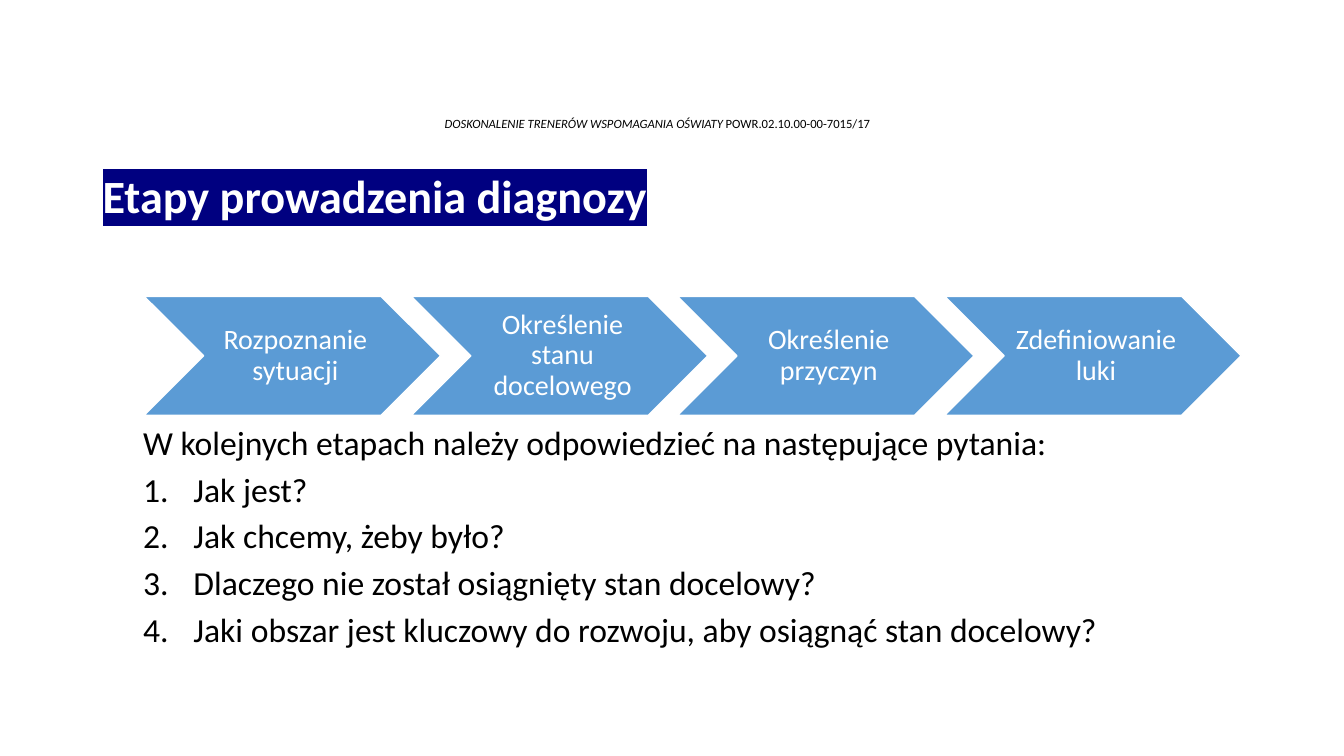
from dataclasses import dataclass

from lxml import etree
from pptx import Presentation
from pptx.dml.color import RGBColor
from pptx.enum import shapes, text
from pptx.oxml import ns
from pptx.util import Emu, Pt

PX = 9144
FONT = "Calibri"
BLACK = RGBColor(0x00, 0x00, 0x00)
WHITE = RGBColor(0xFF, 0xFF, 0xFF)
BLUE = RGBColor(0x5B, 0x9B, 0xD5)
NAVY = RGBColor(0x00, 0x00, 0x80)


@dataclass(frozen=True)
class Box:
    """Hold a position and size in px, 100 to the inch."""
    x: int
    y: int
    w: int
    h: int

    def emu(self) -> list[Emu]:
        """Return left, top, width and height in EMU."""
        return [Emu(n * PX) for n in (self.x, self.y, self.w, self.h)]


@dataclass(frozen=True)
class Stage:
    """Pair a stage of the diagnosis with the question it answers."""
    name: str
    question: str


STAGES = [
    Stage("Rozpoznanie sytuacji", "Jak jest?"),
    Stage("Określenie stanu docelowego", "Jak chcemy, żeby było?"),
    Stage("Określenie przyczyn", "Dlaczego nie został osiągnięty stan docelowy?"),
    Stage("Zdefiniowanie luki",
          "Jaki obszar jest kluczowy do rozwoju, aby osiągnąć stan docelowy?"),
]
INTRO = "W kolejnych etapach należy odpowiedzieć na następujące pytania:"
HEADER = Box(79, 112, 1146, 30)
TITLE = Box(92, 146, 1150, 101)
BODY = Box(132, 418, 1088, 259)
CHEVRON = Box(143, 294, 294, 118)
PITCH = CHEVRON.w * 0.9


def add_text(p, content: str, *, size: float, color: RGBColor = BLACK,
             bold: bool = False, italic: bool = False,
             highlight: RGBColor | None = None, align=text.PP_ALIGN.LEFT) -> None:
    """Append a formatted run to a paragraph."""
    p.alignment = align
    p.line_spacing = 0.9
    r = p.add_run()
    r.text = content
    r.font.size = Pt(size)
    r.font.bold = bold
    r.font.italic = italic
    r.font.color.rgb = color
    r.font.name = FONT
    if highlight is not None:
        mark = etree.Element(ns.qn("a:highlight"))
        etree.SubElement(mark, ns.qn("a:srgbClr"), val=str(highlight))
        r.font.fill._xPr.find(ns.qn("a:latin")).addprevious(mark)


def add_box(slide, box: Box, anchor=text.MSO_ANCHOR.TOP):
    """Add a wrapping text box and return its text frame."""
    tf = slide.shapes.add_textbox(*box.emu()).text_frame
    tf.word_wrap = True
    tf.vertical_anchor = anchor
    return tf


def number(p) -> None:
    """Give a paragraph a hanging automatic number."""
    pPr = p._p.get_or_add_pPr()
    pPr.set("marL", str(50 * PX))
    pPr.set("indent", str(-50 * PX))
    etree.SubElement(pPr, ns.qn("a:buFont"), typeface="+mj-lt")
    etree.SubElement(pPr, ns.qn("a:buAutoNum"), type="arabicPeriod")


def add_chevron(slide, box: Box, name: str) -> None:
    """Add one stage of the process as a labelled chevron."""
    sp = slide.shapes.add_shape(shapes.MSO_SHAPE.CHEVRON, *box.emu())
    sp.shadow.inherit = False
    sp.fill.solid()
    sp.fill.fore_color.rgb = BLUE
    sp.line.color.rgb = WHITE
    sp.line.width = Pt(1)
    tf = sp.text_frame
    tf.word_wrap = True
    tf.vertical_anchor = text.MSO_ANCHOR.MIDDLE
    tf.margin_left = Emu(9 * PX)
    tf.margin_top = tf.margin_right = tf.margin_bottom = Emu(3 * PX)
    add_text(tf.paragraphs[0], name, size=20, color=WHITE, align=text.PP_ALIGN.CENTER)


def main() -> None:
    """Build the slide and save it."""
    prs = Presentation()
    prs.slide_width, prs.slide_height = Emu(1333 * PX), Emu(750 * PX)
    slide = prs.slides.add_slide(prs.slide_layouts[6])

    p = add_box(slide, HEADER).paragraphs[0]
    add_text(p, "DOSKONALENIE TRENERÓW WSPOMAGANIA OŚWIATY ", size=9, italic=True,
             align=text.PP_ALIGN.CENTER)
    add_text(p, "POWR.02.10.00-00-7015/17", size=9, align=text.PP_ALIGN.CENTER)

    tf = add_box(slide, TITLE, text.MSO_ANCHOR.MIDDLE)
    add_text(tf.paragraphs[0], "Etapy prowadzenia diagnozy", size=33, color=WHITE,
             bold=True, highlight=NAVY)

    tf = add_box(slide, BODY)
    add_text(tf.paragraphs[0], INTRO, size=24)
    for i, stage in enumerate(STAGES):
        p = tf.add_paragraph()
        number(p)
        p.space_before = Pt(7.5)
        add_text(p, stage.question, size=24)
        x = round(CHEVRON.x + i * PITCH)
        add_chevron(slide, Box(x, CHEVRON.y, CHEVRON.w, CHEVRON.h), stage.name)

    prs.save("out.pptx")


if __name__ == "__main__":
    main()
